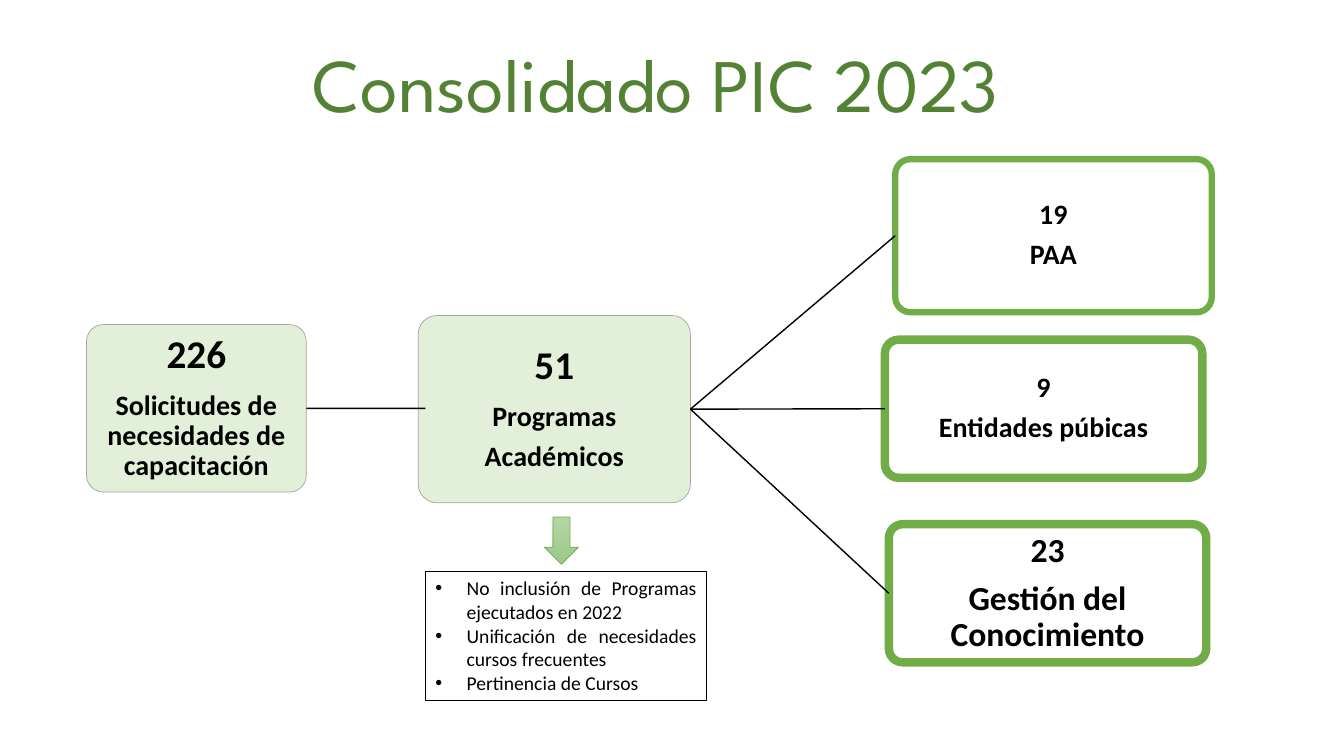
from lxml import etree
from pptx import Presentation
from pptx.dml.color import RGBColor
from pptx.enum.shapes import MSO_CONNECTOR, MSO_SHAPE
from pptx.enum.text import MSO_ANCHOR, PP_ALIGN
from pptx.oxml.ns import qn
from pptx.util import Cm, Pt

ROUNDED, RECT, DOWN_ARROW = (
    MSO_SHAPE.ROUNDED_RECTANGLE, MSO_SHAPE.RECTANGLE, MSO_SHAPE.DOWN_ARROW)
STRAIGHT = MSO_CONNECTOR.STRAIGHT
TOP, MIDDLE = MSO_ANCHOR.TOP, MSO_ANCHOR.MIDDLE
CENTER, JUSTIFY = PP_ALIGN.CENTER, PP_ALIGN.JUSTIFY
LEFT_SIDE, RIGHT_SIDE = 1, 3

BLACK = RGBColor(0x00, 0x00, 0x00)
WHITE = RGBColor(0xFF, 0xFF, 0xFF)
GREEN = RGBColor(0x70, 0xAD, 0x47)
DARK_GREEN = RGBColor(0x54, 0x82, 0x35)
PALE_GREEN = RGBColor(0xE2, 0xF0, 0xD9)
ARROW_TOP = RGBColor(0xB5, 0xD5, 0xA7)
ARROW_BOTTOM = RGBColor(0x9C, 0xC9, 0x87)
GRAY = RGBColor(0xA5, 0xA5, 0xA5)


class Diagram:
    body_font = "Calibri"
    title_font = "League Spartan"

    def __init__(self, slide):
        self.s = slide

    def format(self, p, size, align, color=BLACK, font=body_font, bold=False):
        p.alignment = align
        for r in p.runs:
            r.font.size = Pt(size)
            r.font.name = font
            r.font.color.rgb = color
            r.font.bold = bold

    def title(self, text, x, y, w, h):
        tf = self.s.shapes.add_textbox(Cm(x), Cm(y), Cm(w), Cm(h)).text_frame
        tf.word_wrap = True
        tf.text = text
        self.format(tf.paragraphs[0], 54, CENTER, DARK_GREEN, self.title_font)

    def shape(self, kind, x, y, w, h, line, width, fill=None):
        sp = self.s.shapes.add_shape(kind, Cm(x), Cm(y), Cm(w), Cm(h))
        sp.shadow.inherit = False
        sp.line.color.rgb = line
        sp.line.width = Pt(width)
        if fill is not None:
            sp.fill.solid()
            sp.fill.fore_color.rgb = fill
        return sp

    def card(self, lines, x, y, w, h, line, width, fill):
        """Rounded box; lines holds (text, size) pairs."""
        sp = self.shape(ROUNDED, x, y, w, h, line, width, fill)
        sp.adjustments[0] = 0.1
        tf = sp.text_frame
        tf.word_wrap = True
        tf.vertical_anchor = MIDDLE
        tf.margin_left = tf.margin_right = Cm(0.2)
        tf.margin_top = tf.margin_bottom = Cm(0.1)
        tf.text = "\n".join(text for text, size in lines)
        for p, (text, size) in zip(tf.paragraphs, lines):
            p.line_spacing = 0.9
            p.space_after = Pt(0.35 * size)
            self.format(p, size, CENTER, bold=True)
        return sp

    def bullet_box(self, items, x, y, w, h):
        tf = self.shape(RECT, x, y, w, h, BLACK, 1, WHITE).text_frame
        tf.word_wrap = True
        tf.vertical_anchor = TOP
        tf.text = "\n".join(items)
        for p in tf.paragraphs:
            pPr = p._p.get_or_add_pPr()
            pPr.set("marL", str(Cm(0.79)))
            pPr.set("indent", str(-Cm(0.79)))
            etree.SubElement(pPr, qn("a:buFont")).set("typeface", "Arial")
            etree.SubElement(pPr, qn("a:buChar")).set("char", "•")
            self.format(p, 14, JUSTIFY)

    def arrow(self, x, y, w, h):
        fill = self.shape(DOWN_ARROW, x, y, w, h, GREEN, 0.5).fill
        fill.gradient()
        fill.gradient_angle = 270
        for stop, color in zip(fill.gradient_stops, (ARROW_TOP, ARROW_BOTTOM)):
            stop.color.rgb = color

    def link(self, start, end=None, x=0, y=0):
        """Line from the right side of start to the left side of end, or to x, y."""
        c = self.s.shapes.add_connector(STRAIGHT, 0, 0, Cm(x), Cm(y))
        c.begin_connect(start, RIGHT_SIDE)
        if end is not None:
            c.end_connect(end, LEFT_SIDE)
        c.line.color.rgb = BLACK
        c.line.width = Pt(1)
        etree.SubElement(c._element.spPr, qn("a:effectLst"))


def main():
    prs = Presentation()
    prs.slide_width, prs.slide_height = Cm(33.87), Cm(19.05)
    d = Diagram(prs.slides.add_slide(prs.slide_layouts[6]))

    d.title("Consolidado PIC 2023", -0.18, 0.81, 33.43, 4.62)

    programs = d.card([("51", 28), ("Programas", 20), ("Académicos", 20)],
                      10.54, 7.95, 6.86, 4.72, GRAY, 0.5, PALE_GREEN)
    requests = d.card(
        [("226", 28), ("Solicitudes de necesidades de capacitación", 20)],
        2.18, 8.18, 5.54, 4.22, GRAY, 0.5, PALE_GREEN)
    d.link(requests, x=10.72, y=10.29)

    results = [
        ("19", "PAA", 20, 22.56, 4.01, 7.98, 3.86, 4.5),
        ("9", "Entidades púbicas", 20, 22.3, 8.56, 8, 3.48, 6),
        ("23", "Gestión del Conocimiento", 24, 22.4, 13.21, 8, 3.48, 6),
    ]
    for count, name, size, x, y, w, h, width in results:
        result = d.card([(count, size), (name, size)],
                        x, y, w, h, GREEN, width, WHITE)
        d.link(programs, result)

    d.bullet_box(["No inclusión de Programas ejecutados en 2022",
                  "Unificación de necesidades cursos frecuentes",
                  "Pertinencia de Cursos"], 10.72, 14.4, 7.09, 3.25)
    d.arrow(13.72, 13.03, 0.86, 1.19)

    prs.save("out.pptx")


if __name__ == "__main__":
    main()
